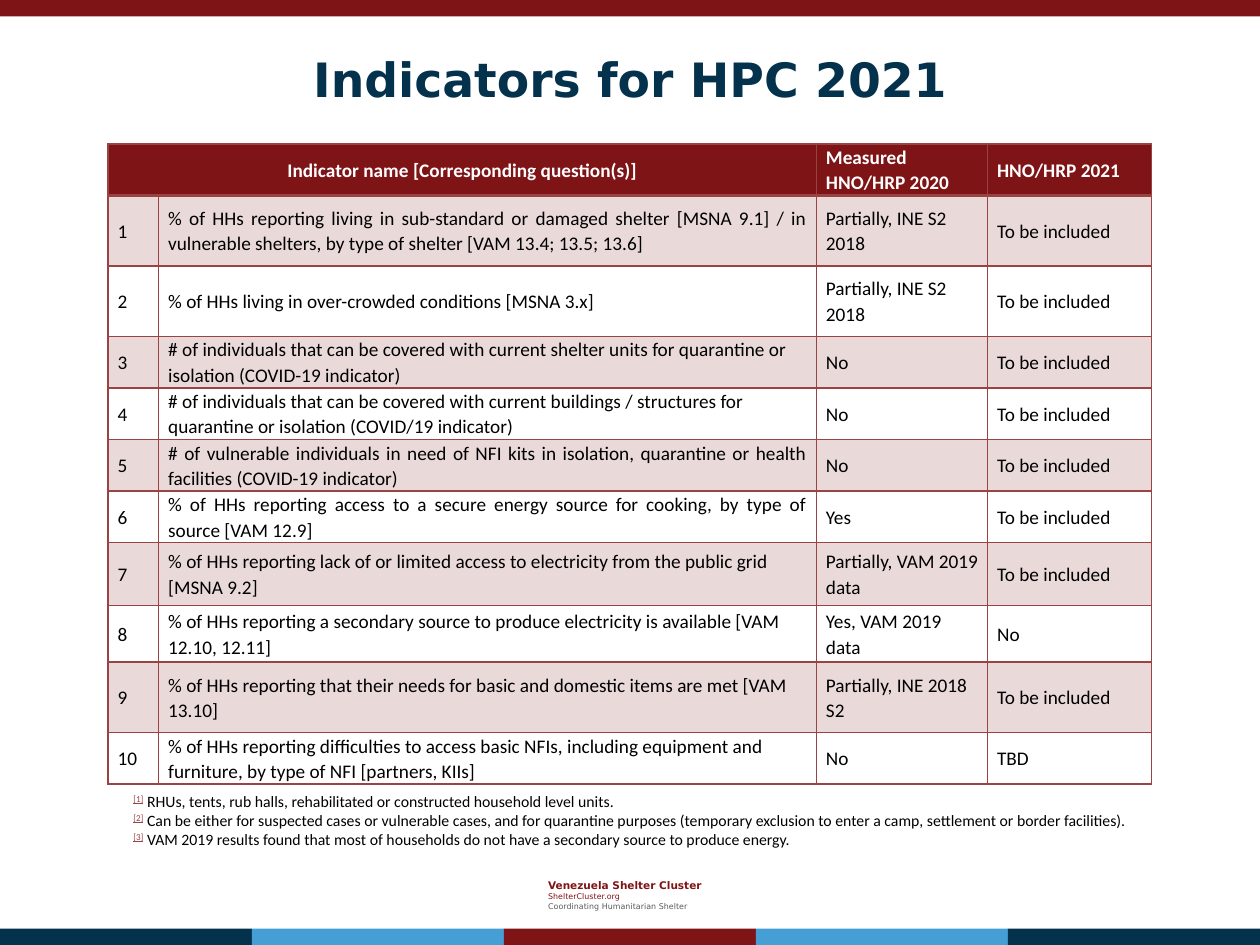
from dataclasses import dataclass

from lxml.etree import SubElement
from pptx import Presentation
from pptx.dml.color import RGBColor as RGB
from pptx.enum.shapes import MSO_SHAPE as Shape
from pptx.enum.text import MSO_ANCHOR as Anchor, PP_ALIGN as Align
from pptx.oxml.ns import qn
from pptx.util import Cm, Pt


@dataclass(frozen=True)
class Theme:
    heading_font: str = "DejaVu Sans"
    body_font: str = "Calibri"
    red: str = "7F1416"
    navy: str = "04314C"
    blue: str = "459FD5"
    rule: str = "994345"
    grey: str = "595959"
    black: str = "000000"
    white: str = "FFFFFF"
    band_alpha: int = 20
    title_size: float = 27
    table_size: float = 11
    note_size: float = 9
    brand_size: float = 6
    tagline_size: float = 4.5
    line_spacing: float = 1.07


class SlideBuilder:
    def __init__(self, slide, theme):
        self.slide = slide
        self.theme = theme

    def style(self, font, name, size, color, bold=False):
        font.name = name
        font.size = Pt(size)
        font.bold = bold
        font.color.rgb = RGB.from_string(color)

    def bar(self, left, top, width, height, color):
        shape = self.slide.shapes.add_shape(
            Shape.RECTANGLE, Cm(left), Cm(top), Cm(width), Cm(height))
        shape.shadow.inherit = False
        shape.fill.solid()
        shape.fill.fore_color.rgb = RGB.from_string(color)
        shape.line.fill.background()

    def text_box(self, left, top, width, height, count):
        shape = self.slide.shapes.add_textbox(Cm(left), Cm(top), Cm(width), Cm(height))
        frame = shape.text_frame
        frame.word_wrap = True
        frame.vertical_anchor = Anchor.MIDDLE
        for _ in range(count - 1):
            frame.add_paragraph()
        return frame.paragraphs

    def text(self, left, top, width, height, lines, align=Align.LEFT):
        paragraphs = self.text_box(left, top, width, height, len(lines))
        for paragraph, (words, size, color, bold) in zip(paragraphs, lines):
            paragraph.text = words
            paragraph.alignment = align
            self.style(paragraph.font, self.theme.heading_font, size, color, bold)

    def footnotes(self, left, top, width, height, notes):
        theme = self.theme
        paragraphs = self.text_box(left, top, width, height, len(notes))
        for number, (paragraph, note) in enumerate(zip(paragraphs, notes), 1):
            paragraph.alignment = Align.JUSTIFY
            mark = paragraph.add_run()
            mark.text = f"[{number}]"
            self.style(mark.font, theme.body_font, theme.note_size, theme.rule)
            mark.font.underline = True
            mark.font._element.set("baseline", "30000")
            run = paragraph.add_run()
            run.text = f" {note}"
            self.style(run.font, theme.body_font, theme.note_size, theme.black)

    def borders(self, cell, bottom):
        properties = cell._tc.get_or_add_tcPr()
        for side, width in (("L", 1), ("R", 1), ("T", 1), ("B", bottom)):
            line = SubElement(properties, qn(f"a:ln{side}"), w=str(Pt(width)))
            fill = SubElement(line, qn("a:solidFill"))
            SubElement(fill, qn("a:srgbClr"), val=self.theme.rule)

    def cell(self, cell, words, align, header=False, banded=False):
        theme = self.theme
        cell.margin_left = cell.margin_right = Cm(0.19)
        cell.margin_top = cell.margin_bottom = 0
        cell.vertical_anchor = Anchor.MIDDLE
        self.borders(cell, 2 if header else 1)
        if header or banded:
            cell.fill.solid()
            cell.fill.fore_color.rgb = RGB.from_string(theme.red if header else theme.rule)
        else:
            cell.fill.background()
        if banded:
            color = cell._tc.tcPr.find(f"{qn('a:solidFill')}/{qn('a:srgbClr')}")
            SubElement(color, qn("a:alpha"), val=str(theme.band_alpha * 1000))
        paragraph = cell.text_frame.paragraphs[0]
        paragraph.text = words
        paragraph.alignment = align
        paragraph.line_spacing = theme.line_spacing
        self.style(paragraph.font, theme.body_font, theme.table_size,
                   theme.white if header else theme.black, header)

    def table(self, left, top, widths, heights, headers, rows):
        table = self.slide.shapes.add_table(
            len(heights), len(widths), Cm(left), Cm(top),
            Cm(sum(widths)), Cm(sum(heights))).table
        table.first_row = table.horz_banding = False
        for column, width in zip(table.columns, widths):
            column.width = Cm(width)
        for row, height in zip(table.rows, heights):
            row.height = Cm(height)
        table.cell(0, 0).merge(table.cell(0, 1))
        header_aligns = (Align.CENTER, Align.CENTER, Align.JUSTIFY, Align.JUSTIFY)
        for column, (words, align) in enumerate(zip(headers, header_aligns)):
            self.cell(table.cell(0, column), words, align, header=True)
        for number, (align, indicator, measured, status) in enumerate(rows, 1):
            values = (str(number), indicator, measured, status)
            aligns = (align, align, Align.LEFT, Align.JUSTIFY)
            for column, (words, cell_align) in enumerate(zip(values, aligns)):
                self.cell(table.cell(number, column), words, cell_align,
                          banded=number % 2 == 1)


HEADERS = ("Indicator name [Corresponding question(s)]", "",
           "Measured HNO/HRP 2020", "HNO/HRP 2021")
INCLUDED = "To be included"
INDICATORS = (
    (Align.JUSTIFY, "% of HHs reporting living in sub-standard or damaged shelter [MSNA 9.1] / in "
     "vulnerable shelters, by type of shelter [VAM 13.4; 13.5; 13.6]",
     "Partially, INE S2 2018", INCLUDED),
    (Align.JUSTIFY, "% of HHs living in over-crowded conditions [MSNA 3.x]",
     "Partially, INE S2 2018", INCLUDED),
    (Align.LEFT, "# of individuals that can be covered with current shelter units for "
     "quarantine or isolation (COVID-19 indicator)", "No", INCLUDED),
    (Align.LEFT, "# of individuals that can be covered with current buildings / structures "
     "for quarantine or isolation (COVID/19 indicator)", "No", INCLUDED),
    (Align.JUSTIFY, "# of vulnerable individuals in need of NFI kits in isolation, quarantine "
     "or health facilities (COVID-19 indicator)", "No", INCLUDED),
    (Align.JUSTIFY, "% of HHs reporting access to a secure energy source for cooking, by type "
     "of source [VAM 12.9]", "Yes", INCLUDED),
    (Align.LEFT, "% of HHs reporting lack of or limited access to electricity from the public "
     "grid [MSNA 9.2]", "Partially, VAM 2019 data", INCLUDED),
    (Align.LEFT, "% of HHs reporting a secondary source to produce electricity is available "
     "[VAM 12.10, 12.11]", "Yes, VAM 2019 data", "No"),
    (Align.LEFT, "% of HHs reporting that their needs for basic and domestic items are met "
     "[VAM 13.10]", "Partially, INE 2018 S2", INCLUDED),
    (Align.LEFT, "% of HHs reporting difficulties to access basic NFIs, including equipment "
     "and furniture, by type of NFI [partners, KIIs]", "No", "TBD"),
)
COLUMN_WIDTHS = (1.02, 13.26, 3.45, 3.3)
ROW_HEIGHTS = (1.04, 1.42, 1.42, 1.04, 1.04, 1.04, 1.04, 1.27, 1.14, 1.42, 1.04)
NOTES = (
    "RHUs, tents, rub halls, rehabilitated or constructed household level units.",
    "Can be either for suspected cases or vulnerable cases, and for quarantine purposes "
    "(temporary exclusion to enter a camp, settlement or border facilities).",
    "VAM 2019 results found that most of households do not have a secondary source to "
    "produce energy.",
)


def main():
    theme = Theme()
    presentation = Presentation()
    presentation.slide_width, presentation.slide_height = Cm(25.4), Cm(19.05)
    slide = presentation.slides.add_slide(presentation.slide_layouts[6])
    builder = SlideBuilder(slide, theme)

    builder.text(10.8, 17.6, 4.83, 0.89, (
        ("Venezuela Shelter Cluster", theme.brand_size, theme.red, True),
        ("ShelterCluster.org", theme.tagline_size, theme.red, False),
        ("Coordinating Humanitarian Shelter", theme.tagline_size, theme.grey, False),
    ))
    builder.bar(0, 0, 25.4, 0.33, theme.red)
    stripe = 25.4 / 5
    stripe_colors = (theme.navy, theme.blue, theme.red, theme.blue, theme.navy)
    for index, color in enumerate(stripe_colors):
        builder.bar(index * stripe, 18.72, stripe, 0.33, color)

    builder.text(1.27, 0, 22.86, 3.18, (
        ("Indicators for HPC 2021", theme.title_size, theme.navy, True),
    ), Align.CENTER)
    builder.table(2.18, 2.9, COLUMN_WIDTHS, ROW_HEIGHTS, HEADERS, INDICATORS)
    builder.footnotes(2.44, 15.82, 21.03, 1.42, NOTES)
    presentation.save("out.pptx")


if __name__ == "__main__":
    main()
